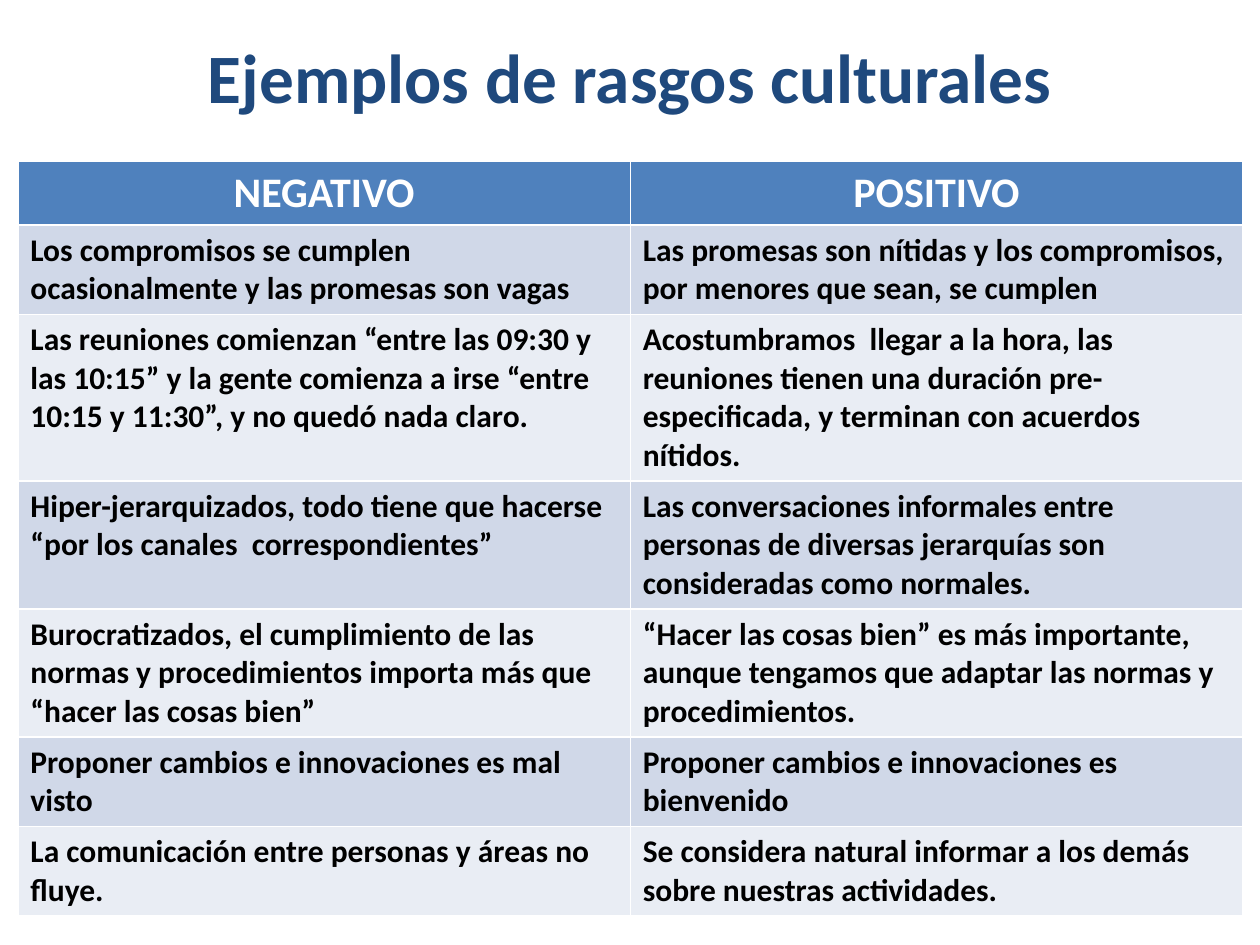
from pptx import Presentation
from pptx.dml.color import RGBColor
from pptx.enum.text import MSO_ANCHOR, MSO_AUTO_SIZE, PP_ALIGN
from pptx.util import Cm, Pt

NAVY = RGBColor(0x1F, 0x49, 0x7D)
BLUE = RGBColor(0x4F, 0x81, 0xBD)
BAND_DARK = RGBColor(0xD0, 0xD8, 0xE8)
BAND_LIGHT = RGBColor(0xE9, 0xED, 0xF4)
WHITE = RGBColor(0xFF, 0xFF, 0xFF)
BLACK = RGBColor(0, 0, 0)

TRAITS = [
    ("NEGATIVO", "POSITIVO"),
    ("Los compromisos se cumplen ocasionalmente y las promesas son vagas",
     "Las promesas son nítidas y los compromisos, por menores que sean, se cumplen"),
    ("Las reuniones comienzan “entre las 09:30 y las 10:15” y la gente comienza a irse "
     "“entre 10:15 y 11:30”, y no quedó nada claro.",
     "Acostumbramos  llegar a la hora, las reuniones tienen una duración "
     "pre-especificada, y terminan con acuerdos nítidos."),
    ("Hiper-jerarquizados, todo tiene que hacerse “por los canales  correspondientes”",
     "Las conversaciones informales entre personas de diversas jerarquías son "
     "consideradas como normales."),
    ("Burocratizados, el cumplimiento de las normas y procedimientos importa más que "
     "“hacer las cosas bien”",
     "“Hacer las cosas bien” es más importante, aunque tengamos que adaptar las normas "
     "y procedimientos."),
    ("Proponer cambios e innovaciones es mal visto",
     "Proponer cambios e innovaciones es bienvenido"),
    ("La comunicación entre personas y áreas no fluye.",
     "Se considera natural informar a los demás sobre nuestras actividades."),
]


def style_text(tf, size, color, align):
    p = tf.paragraphs[0]
    p.alignment = align
    font = p.runs[0].font
    font.name = "Calibri"
    font.size = Pt(size)
    font.bold = True
    font.color.rgb = color


prs = Presentation()
prs.slide_width, prs.slide_height = Cm(25.4), Cm(19.05)
s = prs.slides.add_slide(prs.slide_layouts[5])

title = s.shapes.title
title.left, title.top, title.width, title.height = Cm(1.27), Cm(0.76), Cm(22.86), Cm(1.55)
tf = title.text_frame
tf.text = "Ejemplos de rasgos culturales"
tf.auto_size = MSO_AUTO_SIZE.NONE
tf.vertical_anchor = MSO_ANCHOR.MIDDLE
style_text(tf, 39.6, NAVY, PP_ALIGN.CENTER)

# Rows start at a common minimum height and grow with their text
row_height = Cm(1.04)
table = s.shapes.add_table(len(TRAITS), 2, Cm(0.36), Cm(3.25), Cm(24.69),
                           row_height * len(TRAITS)).table
for i, texts in enumerate(TRAITS):
    for j, text in enumerate(texts):
        cell = table.cell(i, j)
        cell.text_frame.text = text
        cell.fill.solid()
        if i == 0:
            cell.fill.fore_color.rgb = BLUE
            style_text(cell.text_frame, 24, WHITE, PP_ALIGN.CENTER)
        else:
            cell.fill.fore_color.rgb = BAND_DARK if i % 2 else BAND_LIGHT
            style_text(cell.text_frame, 18, BLACK, PP_ALIGN.LEFT)

prs.save("out.pptx")
